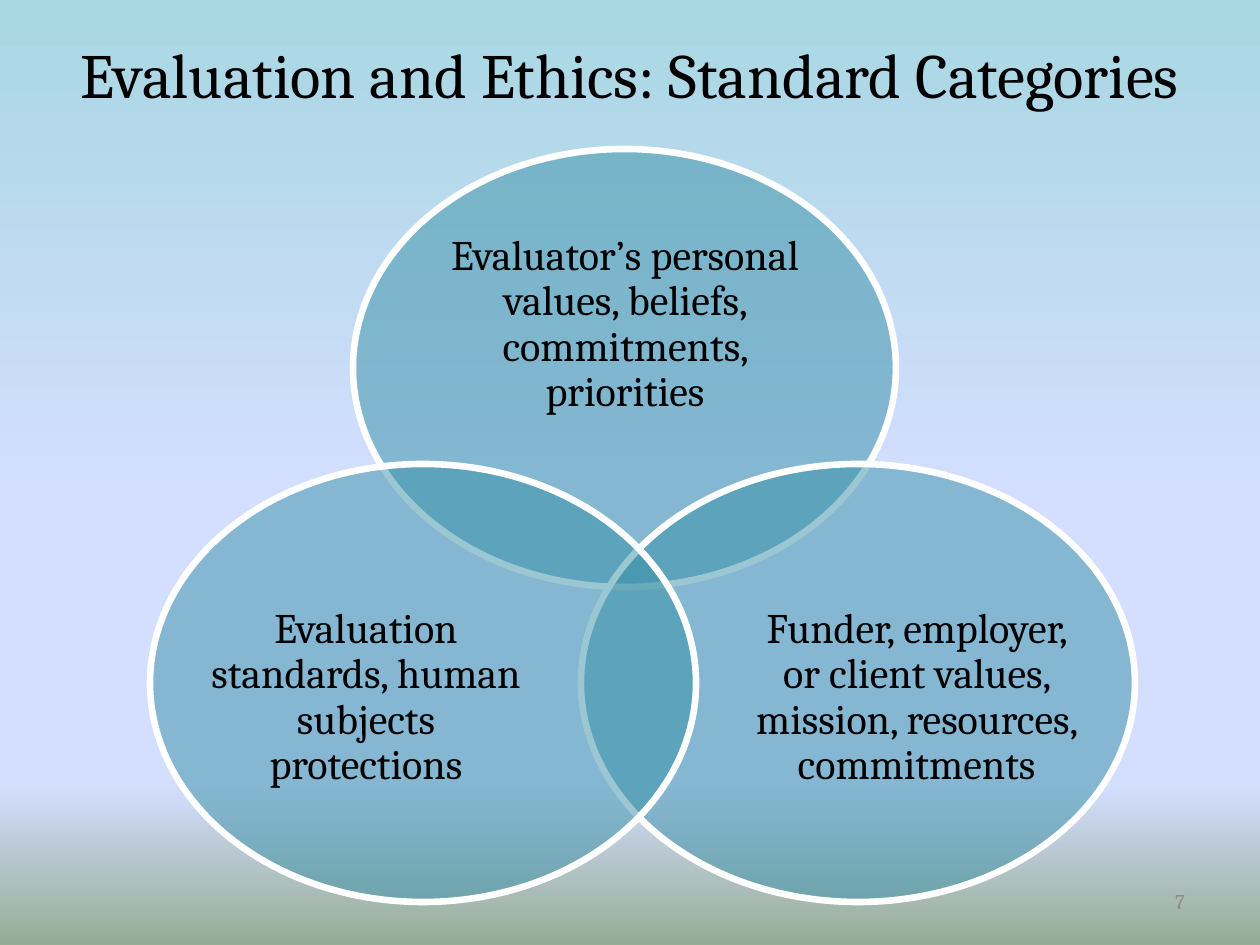
import copy

import pptx
import pptx.dml.color
import pptx.enum.shapes
import pptx.enum.text
import pptx.oxml
import pptx.oxml.ns
import pptx.util

RGBColor = pptx.dml.color.RGBColor
Align = pptx.enum.text.PP_ALIGN

SCALE = 914400 / 126
BLACK = RGBColor(0x00, 0x00, 0x00)
WHITE = RGBColor(0xFF, 0xFF, 0xFF)
GRAY = RGBColor(0x8C, 0x8C, 0x8C)
TEAL = RGBColor(0x38, 0x91, 0xA7)
SKY = RGBColor(0xA9, 0xD7, 0xE2)
LAVENDER = RGBColor(0xD4, 0xDE, 0xFF)
SAGE = RGBColor(0x96, 0xAB, 0x94)


def px(*lengths):
    return [pptx.util.Emu(round(length * SCALE)) for length in lengths]


def add_text(page, place, text, size, color, align, inset):
    box = page.shapes.add_textbox(*px(*place))
    frame = box.text_frame
    frame.word_wrap = True
    frame.vertical_anchor = pptx.enum.text.MSO_ANCHOR.MIDDLE
    frame.margin_left = frame.margin_right = px(inset)[0]
    frame.margin_top = frame.margin_bottom = px(inset // 2)[0]
    para = frame.paragraphs[0]
    para.text = text
    para.alignment = align
    para.font.name = "Cambria"
    para.font.size = pptx.util.Pt(size)
    para.font.color.rgb = color
    return para


deck = pptx.Presentation()
deck.slide_width, deck.slide_height = px(1260, 945)
page = deck.slides.add_slide(deck.slide_layouts[6])

# Background: four-stop vertical gradient
fill = page.background.fill
fill.gradient()
fill.gradient_angle = 270
stop_list = next(page.element.iter(pptx.oxml.ns.qn("a:gsLst")))
for _ in range(2):
    stop_list.append(copy.deepcopy(stop_list[0]))
stops = [(0, SKY), (0.53, LAVENDER), (0.83, LAVENDER), (1, SAGE)]
for stop, (position, color) in zip(fill.gradient_stops, stops):
    stop.position = position
    stop.color.rgb = color

# Title
add_text(page, (0, 0, 1260, 147), "Evaluation and Ethics: Standard Categories",
         36, BLACK, Align.CENTER, 12)

# Overlapping circles, back to front, each with its label
circles = [
    ((353, 149, 543, 438), (426, 226, 398, 198),
     "Evaluator’s personal values, beliefs, commitments, priorities"),
    ((581, 464, 554, 438), (750, 577, 333, 242),
     "Funder, employer, or client values, mission, resources, commitments"),
    ((150, 464, 546, 438), (202, 577, 328, 242),
     "Evaluation standards, human subjects protections"),
]
for oval_place, label_place, label in circles:
    oval = page.shapes.add_shape(pptx.enum.shapes.MSO_SHAPE.OVAL, *px(*oval_place))
    oval.shadow.inherit = False
    oval.fill.solid()
    oval.fill.fore_color.rgb = TEAL
    tint = next(oval.element.spPr.iter(pptx.oxml.ns.qn("a:srgbClr")))
    tint.append(pptx.oxml.parse_xml(
        f'<a:alpha {pptx.oxml.ns.nsdecls("a")} val="50000"/>'))
    oval.line.color.rgb = WHITE
    oval.line.width = pptx.util.Pt(3.78)
    para = add_text(page, label_place, label, 24, BLACK, Align.CENTER, 0)
    para.line_spacing = 0.9

# Page number
add_text(page, (903, 876, 294, 50), "7", 12, GRAY, Align.RIGHT, 12)

deck.save("out.pptx")
